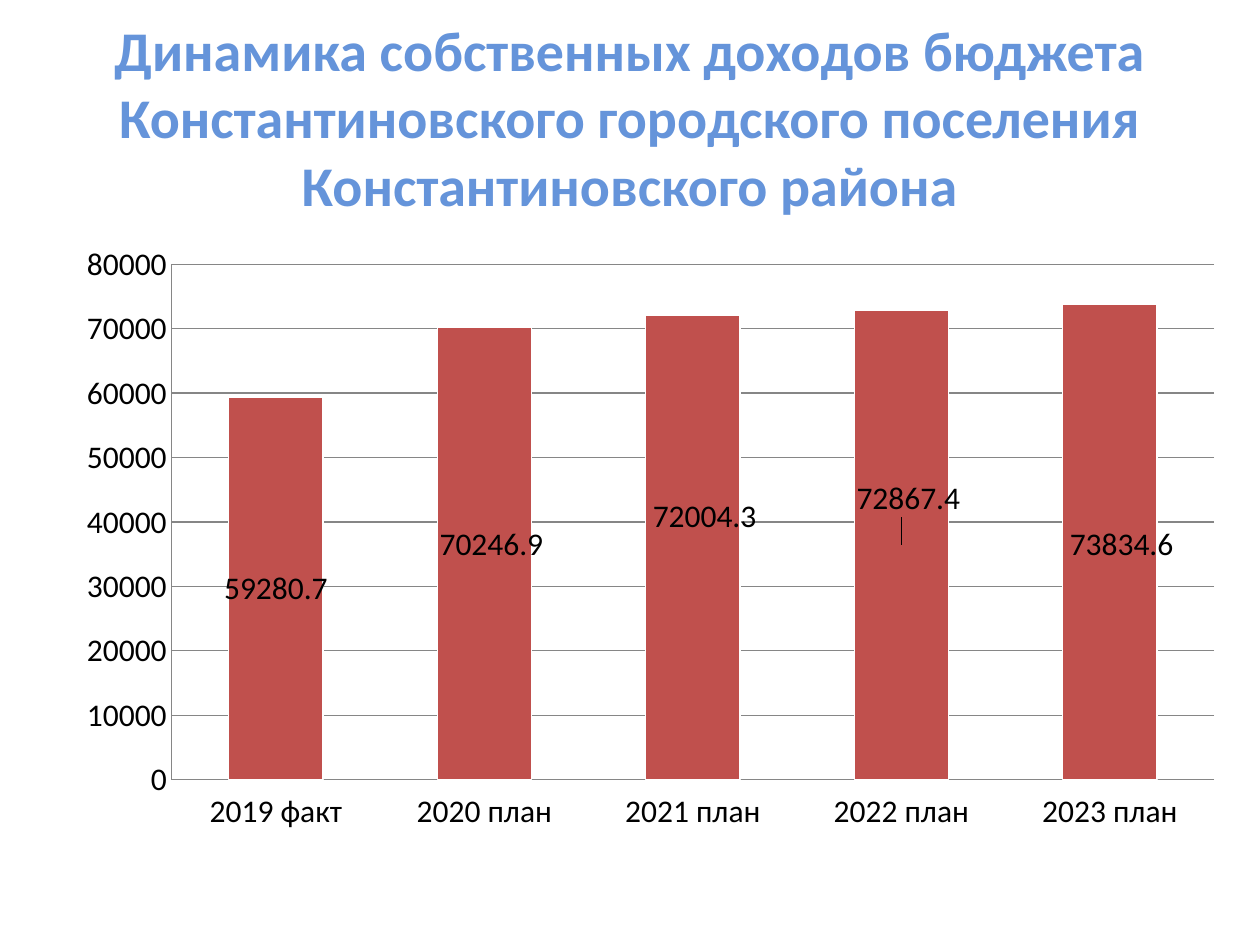
from lxml import etree
from pptx import Presentation
from pptx.chart.data import CategoryChartData
from pptx.dml.color import RGBColor
from pptx.enum.chart import (XL_CHART_TYPE, XL_LABEL_POSITION, XL_TICK_LABEL_POSITION,
                             XL_TICK_MARK)
from pptx.enum.text import MSO_ANCHOR, MSO_AUTO_SIZE, PP_ALIGN
from pptx.oxml.ns import qn
from pptx.util import Cm, Pt

STACKED = XL_CHART_TYPE.COLUMN_STACKED
CENTER = XL_LABEL_POSITION.CENTER
LOW = XL_TICK_LABEL_POSITION.LOW
NO_TICK = XL_TICK_MARK.NONE

# Content
TITLE = ("Динамика собственных доходов бюджета Константиновского "
         "городского поселения Константиновского района")
# Year, income, label shift from the bar centre (share of chart width and height)
INCOME = [
    ("2019 факт", 59280.7, (0, 0)),
    ("2020 план", 70246.9, (0.006, -0.014)),
    ("2021 план", 72004.3, (0.01, -0.05)),
    ("2022 план", 72867.4, (0.006, -0.074)),
    ("2023 план", 73834.6, (0.01, 0.004)),
]
PLOT = {"x": 0.109, "y": 0.031, "w": 0.891, "h": 0.812}
FONT = "Calibri"
BLUE, RED, GREY, BLACK, WHITE = "6594DA", "C0504D", "868686", "000000", "FFFFFF"


def color(fmt, code):
    fmt.rgb = RGBColor.from_string(code)


def style(font, size, code, bold=False):
    font.name, font.size, font.bold = FONT, Pt(size), bold
    color(font.color, code)


def edge(line, code):
    color(line.color, code)
    line.width = Pt(0.75)


def layout(modes, sizes):
    """Build a manual chart layout element."""
    root = etree.Element(qn("c:layout"))
    box = etree.SubElement(root, qn("c:manualLayout"))
    for tag, val in {**modes, **sizes}.items():
        etree.SubElement(box, qn("c:" + tag)).set("val", str(val))
    return root


prs = Presentation()
prs.slide_width, prs.slide_height = Cm(25.4), Cm(19.05)
slide = prs.slides.add_slide(prs.slide_layouts[5])

# Title
title = slide.shapes.title
title.left, title.top, title.width, title.height = Cm(1.27), Cm(0.76), Cm(22.86), Cm(3.18)
frame = title.text_frame
frame.text = TITLE
frame.word_wrap = True
frame.auto_size = MSO_AUTO_SIZE.NONE
frame.vertical_anchor = MSO_ANCHOR.MIDDLE
frame.paragraphs[0].alignment = PP_ALIGN.CENTER
style(frame.paragraphs[0].runs[0].font, 32, BLUE, True)

# Chart
data = CategoryChartData()
data.categories = [year for year, _, _ in INCOME]
data.add_series("Series 1", [val for _, val, _ in INCOME])
chart = slide.shapes.add_chart(STACKED, Cm(0.89), Cm(4.93), Cm(23.6), Cm(12.8), data).chart
chart.has_title = chart.has_legend = False
style(chart.font, 18, BLACK)

# Plot area
area = chart.plots[0]
area.gap_width, area.overlap = 121, 100
area.vary_by_categories = False
plot = chart.element.find(".//" + qn("c:plotArea"))
for old in plot.findall(qn("c:layout")):
    plot.remove(old)
modes = {"layoutTarget": "inner", "xMode": "edge", "yMode": "edge"}
plot.insert(0, layout(modes, PLOT))

# Axes
for axis in (chart.category_axis, chart.value_axis):
    axis.major_tick_mark = axis.minor_tick_mark = NO_TICK
    edge(axis.format.line, GREY)
chart.category_axis.tick_label_position = LOW
scale = chart.value_axis
scale.minimum_scale, scale.maximum_scale, scale.major_unit = 0, 80000, 10000
scale.has_major_gridlines = True
edge(scale.major_gridlines.format.line, GREY)

# Bars
bars = area.series[0]
bars.format.fill.solid()
color(bars.format.fill.fore_color, RED)
edge(bars.format.line, WHITE)

# Value labels
bars.data_labels.show_value = True
style(bars.data_labels.font, 18, BLACK)
for num, (_, _, (dx, dy)) in enumerate(INCOME):
    if dx or dy:
        label = bars.points[num].data_label
        style(label.font, 18, BLACK)
        label.position = CENTER
for mark in chart.element.iter(qn("c:dLbl")):
    idx = mark.find(qn("c:idx"))
    dx, dy = INCOME[int(idx.get("val"))][2]
    idx.addnext(layout({}, {"x": dx, "y": dy}))

prs.save("out.pptx")
